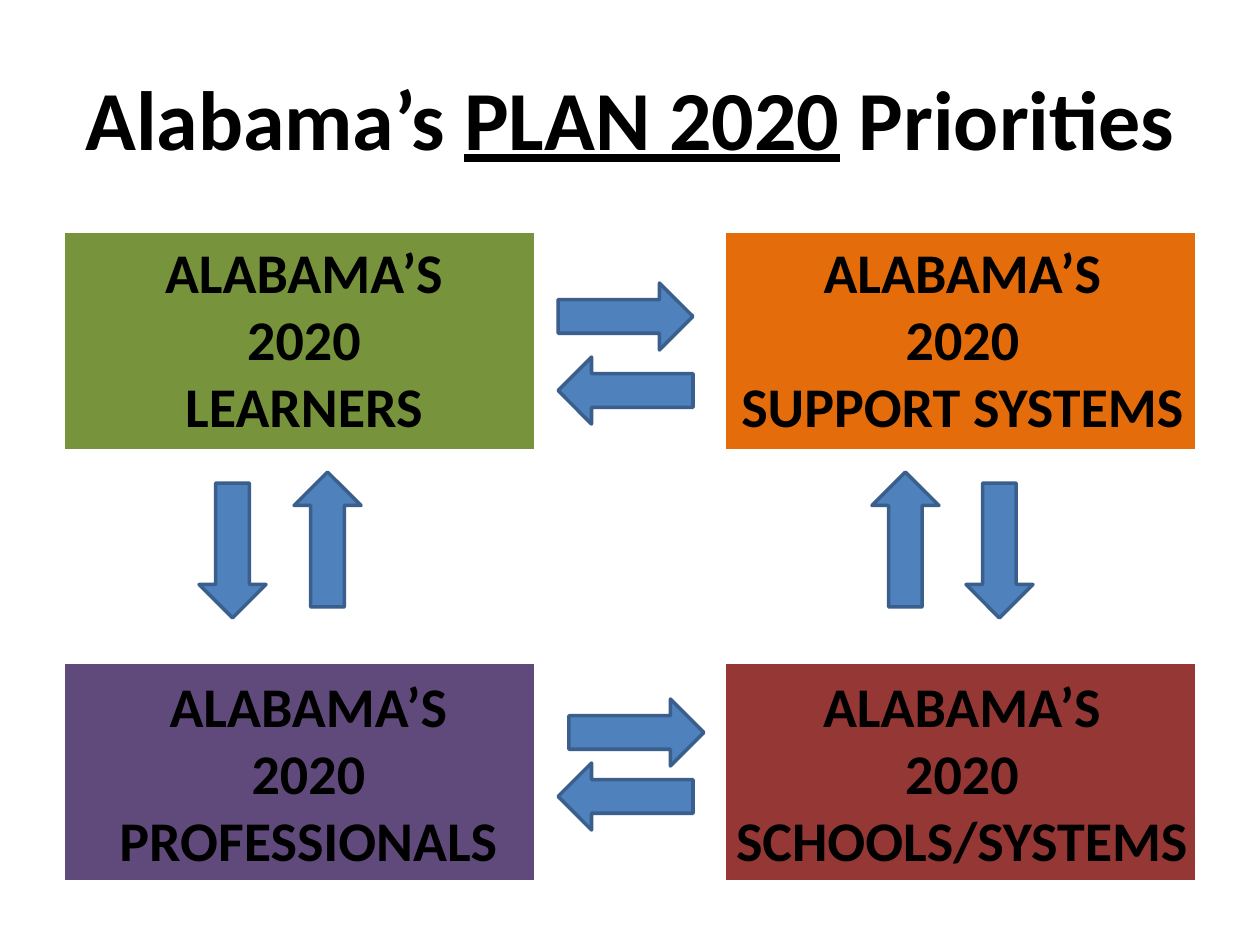
import pptx
import pptx.util
import pptx.dml.color
import pptx.enum.shapes
import pptx.enum.text

PX = 914400 / 126
FONT = "Calibri"
SHAPES = pptx.enum.shapes.MSO_SHAPE
CENTER = pptx.enum.text.PP_ALIGN.CENTER

LEFT, RIGHT = 63, 724
TOP, BOTTOM = 231, 662
PANEL_WIDTH, PANEL_HEIGHT = 473, 220
ARROW_LENGTH, ARROW_THICKNESS = 135, 67

PANELS = [
    (RIGHT, BOTTOM, "953735"),
    (LEFT, BOTTOM, "604A7B"),
    (RIGHT, TOP, "E46C0A"),
    (LEFT, TOP, "77933C"),
]
LABELS = [
    ("LEARNERS", 136, TOP, 336, 296, True),
    ("PROFESSIONALS", 103, 665, 411, 218, False),
    ("SUPPORT SYSTEMS", 700, TOP, 525, 335, True),
    ("SCHOOLS/SYSTEMS", 719, 665, 486, 218, False),
]
HORIZONTAL_ARROWS = [
    (SHAPES.RIGHT_ARROW, 558, 283),
    (SHAPES.LEFT_ARROW, 558, 357),
    (SHAPES.RIGHT_ARROW, 569, 699),
    (SHAPES.LEFT_ARROW, 558, 763),
]
VERTICAL_ARROWS = [
    (SHAPES.DOWN_ARROW, 199, 483),
    (SHAPES.UP_ARROW, 294, 472),
    (SHAPES.UP_ARROW, 872, 472),
    (SHAPES.DOWN_ARROW, 966, 483),
]


def emu(*lengths):
    return [pptx.util.Emu(round(length * PX)) for length in lengths]


def color(value):
    return pptx.dml.color.RGBColor.from_string(value)


def format_paragraph(para, size):
    para.alignment = CENTER
    para.font.name = FONT
    para.font.size = pptx.util.Pt(size)
    para.font.bold = True
    para.font.color.rgb = color("000000")


def add_block(page, kind, bounds, fill, line, line_width):
    block = page.shapes.add_shape(kind, *emu(*bounds))
    block.shadow.inherit = False
    block.fill.solid()
    block.fill.fore_color.rgb = color(fill)
    block.line.color.rgb = color(line)
    block.line.width = pptx.util.Pt(line_width)


def add_panel(page, left, top, fill):
    bounds = (left, top, PANEL_WIDTH, PANEL_HEIGHT)
    add_block(page, SHAPES.RECTANGLE, bounds, fill, "FFFFFF", 2.25)


def add_arrow(page, kind, left, top, width, height):
    add_block(page, kind, (left, top, width, height), "4F81BD", "3A5F8C", 2)


def add_label(page, priority, left, top, width, height, wrap):
    box = page.shapes.add_textbox(*emu(left, top, width, height))
    frame = box.text_frame
    frame.word_wrap = wrap
    frame.auto_size = pptx.enum.text.MSO_AUTO_SIZE.SHAPE_TO_FIT_TEXT
    frame.text = "\n".join(("ALABAMA’S", "2020", priority))
    for para in frame.paragraphs:
        format_paragraph(para, 32)


def set_title(page):
    title = page.shapes.title
    title.left, title.top, title.width, title.height = emu(63, 38, 1134, 157)
    title.text_frame.vertical_anchor = pptx.enum.text.MSO_ANCHOR.MIDDLE
    para = title.text_frame.paragraphs[0]
    format_paragraph(para, 48)
    for text, underline in (("Alabama’s ", False), ("PLAN 2020", True), (" Priorities", False)):
        span = para.add_run()
        span.text = text
        span.font.underline = underline


def main():
    deck = pptx.Presentation()
    deck.slide_width, deck.slide_height = emu(1260, 945)
    page = deck.slides.add_slide(deck.slide_layouts.get_by_name("Title Only"))
    for panel in PANELS:
        add_panel(page, *panel)
    set_title(page)
    for label in LABELS:
        add_label(page, *label)
    for arrow in HORIZONTAL_ARROWS:
        add_arrow(page, *arrow, ARROW_LENGTH, ARROW_THICKNESS)
    for arrow in VERTICAL_ARROWS:
        add_arrow(page, *arrow, ARROW_THICKNESS, ARROW_LENGTH)
    deck.save("out.pptx")


if __name__ == "__main__":
    main()
